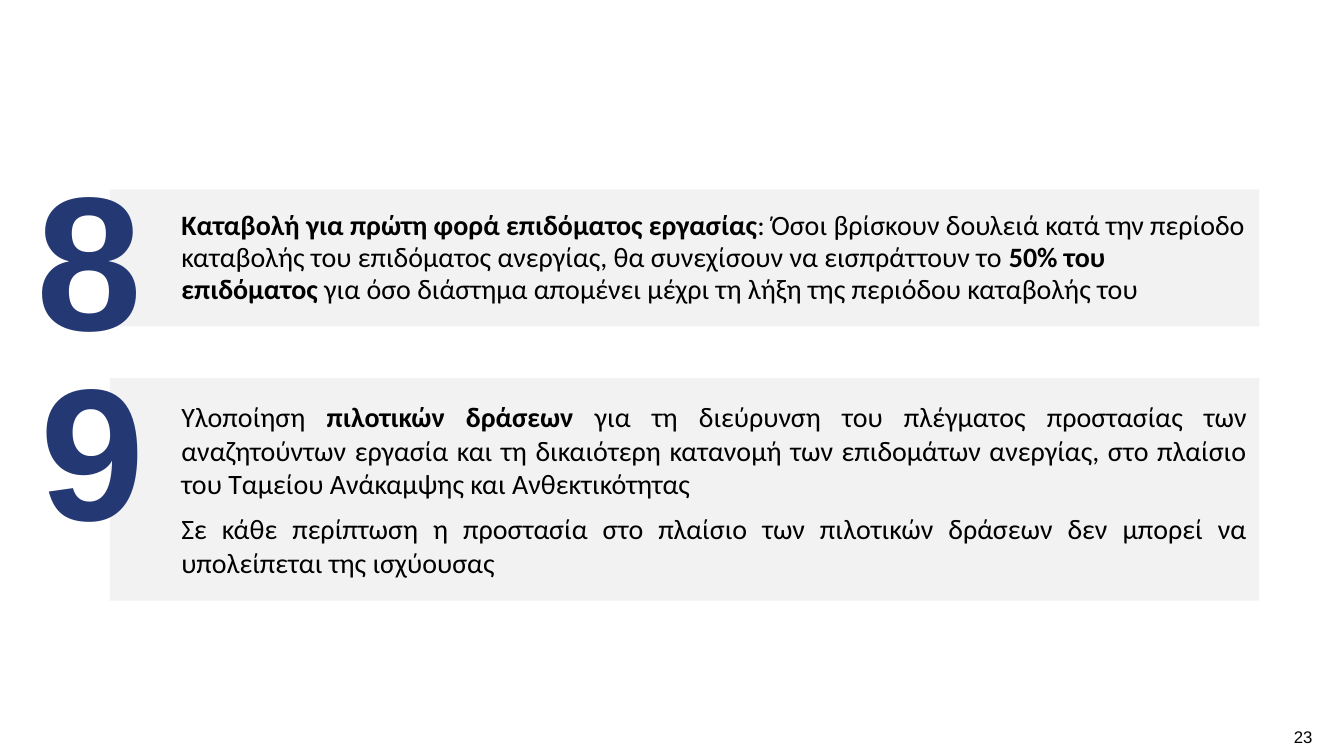
import pptx
import pptx.util
import pptx.dml.color
import pptx.enum.shapes
import pptx.enum.text
from pptx.util import Inches

COLOURS = {"panel": "F2F2F2", "numeral": "243873", "text": "000000"}
ALIGN = pptx.enum.text.PP_ALIGN
ANCHOR = pptx.enum.text.MSO_ANCHOR

PANEL_LEFT, PANEL_WIDTH = 1.09, 11.41
NUMERAL_WIDTH, NUMERAL_HEIGHT = 1.06, 1.95


class MeasuresSlide:
    def __init__(self, presentation):
        self.slide = presentation.slides.add_slide(presentation.slide_layouts[6])

    def colour(self, name):
        return pptx.dml.color.RGBColor.from_string(COLOURS[name])

    def prepare_frame(self, shape, margins, anchor, wrap=True):
        """Set margins, given in inches as left, top, right, bottom."""
        frame = shape.text_frame
        frame.word_wrap = wrap
        frame.vertical_anchor = anchor
        (frame.margin_left, frame.margin_top,
         frame.margin_right, frame.margin_bottom) = map(Inches, margins)
        return frame

    def add_run(self, paragraph, text, size, font="Calibri", bold=False, colour="text"):
        run = paragraph.add_run()
        run.text = text
        run.font.name = font
        run.font.size = pptx.util.Pt(size)
        run.font.bold = bold
        run.font.color.rgb = self.colour(colour)

    def add_panel(self, top, height, paragraphs, alignment, line_spacing=None):
        """Each paragraph is a list of (text, bold) runs."""
        shape = self.slide.shapes.add_shape(
            pptx.enum.shapes.MSO_SHAPE.RECTANGLE, Inches(PANEL_LEFT), Inches(top),
            Inches(PANEL_WIDTH), Inches(height))
        shape.shadow.inherit = False
        shape.fill.solid()
        shape.fill.fore_color.rgb = self.colour("panel")
        shape.line.fill.background()
        frame = self.prepare_frame(shape, (0.71, 0.08, 0.12, 0.08), ANCHOR.MIDDLE)
        for index, runs in enumerate(paragraphs):
            paragraph = frame.add_paragraph() if index else frame.paragraphs[0]
            paragraph.alignment = alignment
            paragraph.line_spacing = line_spacing
            if index:
                paragraph.space_before = pptx.util.Pt(8)
            for text, bold in runs:
                self.add_run(paragraph, text, 20, bold=bold)

    def add_numeral(self, text, left, top, size):
        box = self.slide.shapes.add_textbox(
            Inches(left), Inches(top), Inches(NUMERAL_WIDTH), Inches(NUMERAL_HEIGHT))
        frame = self.prepare_frame(box, (0, 0, 0, 0), ANCHOR.MIDDLE)
        paragraph = frame.paragraphs[0]
        paragraph.alignment = ALIGN.CENTER
        paragraph.line_spacing = 0.85
        paragraph.space_after = pptx.util.Pt(6)
        self.add_run(paragraph, text, size, "Arial", True, "numeral")

    def add_page_number(self, text):
        box = self.slide.shapes.add_textbox(
            Inches(12.77), Inches(7.15), Inches(0.33), Inches(0.31))
        frame = self.prepare_frame(box, (0.06,) * 4, ANCHOR.TOP, wrap=False)
        frame.paragraphs[0].alignment = ALIGN.CENTER
        self.add_run(frame.paragraphs[0], text, 12, "Arial")


def main():
    presentation = pptx.Presentation()
    presentation.slide_width = Inches(13.34)
    presentation.slide_height = Inches(7.5)
    measures = MeasuresSlide(presentation)

    measures.add_page_number("23")

    work_benefit = [[
        ("Καταβολή για πρώτη φορά επιδόματος εργασίας", True),
        (": Όσοι βρίσκουν δουλειά κατά την περίοδο καταβολής του επιδόματος "
         "ανεργίας, θα συνεχίσουν να εισπράττουν το ", False),
        ("50% του επιδόματος ", True),
        ("για όσο διάστημα απομένει μέχρι τη λήξη της περιόδου καταβολής του", False),
    ]]
    measures.add_panel(1.88, 1.36, work_benefit, ALIGN.LEFT, line_spacing=0.95)
    measures.add_numeral("8", 0.36, 1.73, 136)

    pilot_actions = [
        [("Υλοποίηση ", False),
         ("πιλοτικών δράσεων", True),
         (" για τη διεύρυνση του πλέγματος προστασίας των αναζητούντων εργασία "
          "και τη δικαιότερη κατανομή των επιδομάτων ανεργίας, στο πλαίσιο του "
          "Ταμείου Ανάκαμψης και Ανθεκτικότητας", False)],
        [("Σε κάθε περίπτωση η προστασία στο πλαίσιο των πιλοτικών δράσεων "
          "δεν μπορεί να υπολείπεται της ισχύουσας", False)],
    ]
    measures.add_panel(3.75, 2.21, pilot_actions, ALIGN.JUSTIFY)
    measures.add_numeral("9", 0.39, 3.62, 134)

    presentation.save("out.pptx")


if __name__ == "__main__":
    main()
